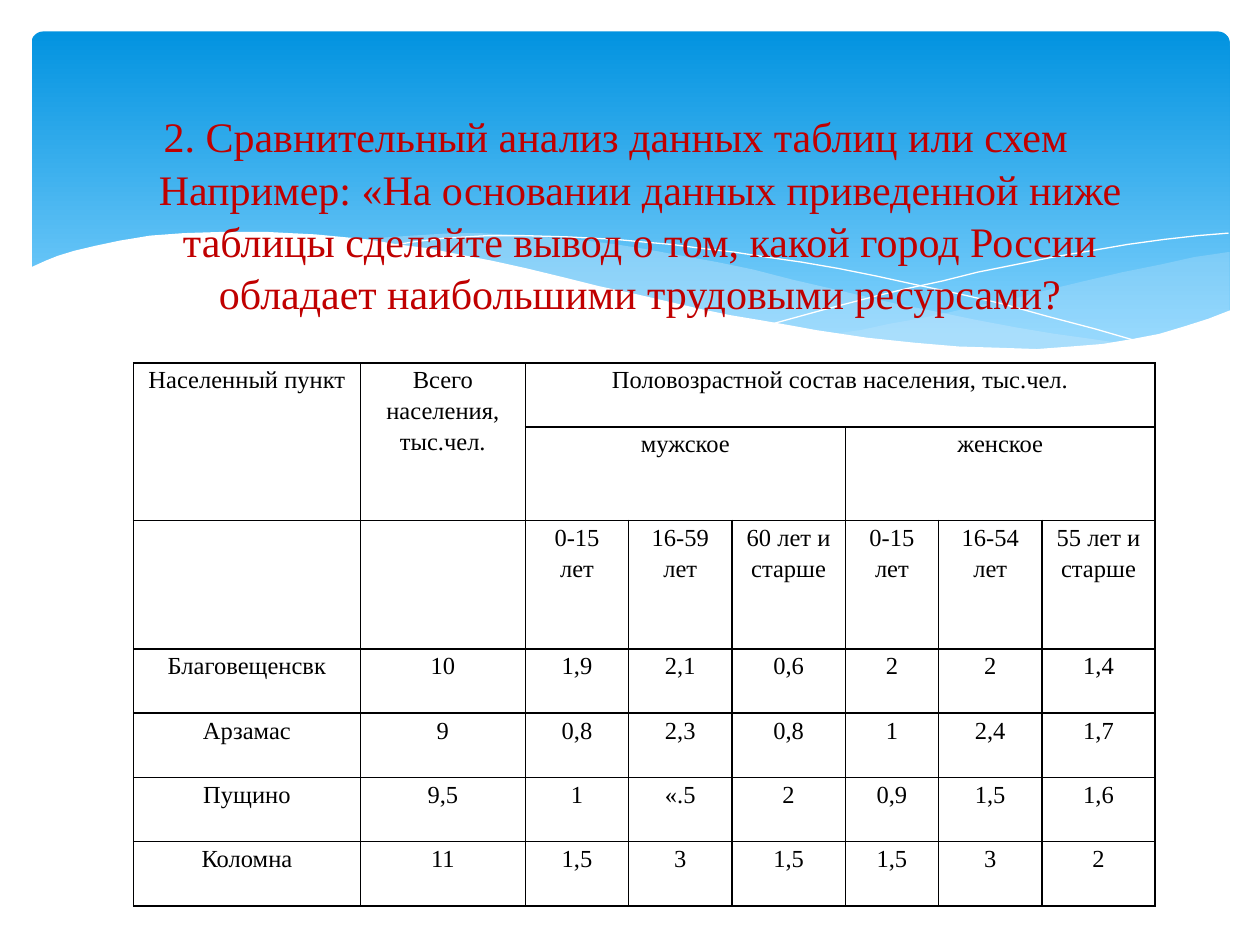
import pptx
import pptx.dml.color
import pptx.enum.shapes
import pptx.enum.text
import pptx.oxml
import pptx.oxml.ns
import pptx.util

COLUMNS, ROWS = 100, 75
FONT = "Times New Roman"
WHITE, PALE, RED, BLACK = "FFFFFF", "C6E7FC", "C00000", "000001"

RIGHT_RIBBON = [
    (97.5, 20), (96.2, 20.2), (94.8, 20.4), (92.1, 21), (89.1, 21.6), (86.1, 22.3),
    (83.2, 23), (80.5, 23.7), (77.9, 24.2), (75.3, 24.8), (72.9, 25.3), (70.6, 25.7),
    (68.3, 26.2), (66.1, 26.5), (69.1, 26.9), (71.9, 27.2), (74.5, 27.5), (76.9, 27.7),
    (80.3, 27.8), (83.5, 27.7), (86.3, 27.5), (88.9, 27.2), (91.3, 26.7), (93.5, 26.2),
    (94.9, 25.7), (96.3, 25.2), (97.6, 24.7), (97.6, 20),
]
LEFT_RIBBON = [
    (89.3, 27.3), (86.6, 26.9), (83.7, 26.5), (80.7, 26), (77.5, 25.4), (74.1, 24.7),
    (70.6, 24), (66.8, 23.1), (62.9, 22.2), (59.8, 21.4), (56.9, 20.8), (54.1, 20.3),
    (51.4, 19.8), (48.9, 19.4), (46.5, 19.1), (44.2, 18.9), (42, 18.7), (39.9, 18.6),
    (38, 18.5), (36.1, 18.5), (34.4, 18.6), (32.8, 18.7), (29.9, 18.9), (28.6, 19.1),
    (32.3, 19.6), (36.2, 20.3), (40.4, 21.1), (44.9, 22.2), (49.1, 23.2), (53, 24),
    (56.6, 24.8), (60.1, 25.5), (63.4, 26.1), (66.5, 26.6), (69.5, 27), (72.2, 27.4),
    (74.8, 27.6), (77.3, 27.7), (79.6, 27.8), (82.8, 27.8), (85.7, 27.7), (87.6, 27.5),
]
FALLING_CURVE = [
    (30.9, 19.5), (32.8, 19.2), (35.3, 18.9), (38.7, 18.7), (41.6, 18.7), (45, 18.8),
    (48.9, 19), (51, 19.2), (53.3, 19.4), (55.6, 19.7), (58.2, 20), (60.8, 20.4),
    (63.6, 20.8), (66.5, 21.3), (69.5, 21.9), (72.7, 22.6), (76, 23.3), (79.5, 24.1),
    (83.1, 25.1), (86.9, 26.1), (90.7, 27.2),
]
RISING_CURVE = [
    (61.3, 25.7), (65.3, 24.6), (69.5, 23.5), (72, 22.9), (74.8, 22.3), (77.6, 21.6),
    (80.6, 21), (83.6, 20.4), (86.6, 19.9), (89.5, 19.4), (92.4, 19), (95.1, 18.7),
    (97.5, 18.5),
]
WAVE = [
    (97.7, 24.6), (95.9, 25.3), (94, 25.9), (92, 26.5), (89.9, 26.9), (87.5, 27.3),
    (85, 27.5), (82.3, 27.7), (79.3, 27.6), (76.1, 27.5), (72.6, 27.2), (68.8, 26.8),
    (66.8, 26.5), (64.8, 26.2), (62.6, 25.8), (60.3, 25.4), (57.9, 25), (55.5, 24.5),
    (52.9, 23.9), (50.3, 23.3), (47.5, 22.7), (44.7, 22), (41.8, 21.3), (39.1, 20.7),
    (36.5, 20.2), (34, 19.7), (31.6, 19.4), (29.2, 19), (27.1, 18.8), (25, 18.6),
    (23, 18.5), (21.1, 18.4), (17.7, 18.4), (14.6, 18.5), (11.9, 18.7), (9.5, 19.1),
    (7.6, 19.5), (5.9, 19.9), (4.6, 20.3), (3.6, 20.7), (2.5, 21.2), (2.3, 21.3),
    (2.3, 32.9), (97.7, 32.9),
]

TITLE = (
    "2. Сравнительный анализ данных таблиц или схем \v"
    "Например: «На основании данных приведенной ниже таблицы сделайте вывод о том, "
    "какой город России обладает наибольшими трудовыми ресурсами?"
)
CELLS = [
    ["Населенный пункт", "Всего населения, тыс.чел.",
     "Половозрастной состав населения, тыс.чел.", "", "", "", "", ""],
    ["", "", "мужское", "", "", "женское", "", ""],
    ["", "", "0-15 лет", "16-59 лет", "60 лет и старше",
     "0-15 лет", "16-54 лет", "55 лет и старше"],
    ["Благовещенсвк", "10", "1,9", "2,1", "0,6", "2", "2", "1,4"],
    ["Арзамас", "9", "0,8", "2,3", "0,8", "1", "2,4", "1,7"],
    ["Пущино", "9,5", "1", "«.5", "2", "0,9", "1,5", "1,6"],
    ["Коломна", "11", "1,5", "3", "1,5", "1,5", "3", "2"],
]
MERGES = [((0, 0), (1, 0)), ((0, 1), (1, 1)), ((0, 2), (0, 7)),
          ((1, 2), (1, 4)), ((1, 5), (1, 7))]
COLUMN_WIDTHS = [18, 13.1, 8.2, 8.2, 9, 7.4, 8.2, 9]
ROW_HEIGHTS = [5.1, 7.4, 10.2] + [5.1] * 4


def color(value):
    return pptx.dml.color.RGBColor.from_string(value)


class Painter:
    def __init__(self, deck):
        self.deck = deck
        self.page = deck.slides.add_slide(deck.slide_layouts[6])

    def x(self, columns):
        return round(self.deck.slide_width * columns / COLUMNS)

    def y(self, rows):
        return round(self.deck.slide_height * rows / ROWS)

    def place(self, left, top, width, height):
        return self.x(left), self.y(top), self.x(width), self.y(height)

    def panel(self, area, start, end):
        shape = self.page.shapes.add_shape(
            pptx.enum.shapes.MSO_SHAPE.ROUNDED_RECTANGLE, *self.place(*area))
        shape.adjustments[0] = 0.034
        shape.shadow.inherit = False
        shape.line.fill.background()
        shape.fill.gradient()
        shape.fill.gradient_angle = 270
        for stop, position, value in zip(shape.fill.gradient_stops, (0, 0.9), (start, end)):
            stop.position = position
            stop.color.rgb = color(value)

    def outline(self, points, closed):
        spots = [(self.x(left), self.y(top)) for left, top in points]
        builder = self.page.shapes.build_freeform(*spots[0])
        builder.add_line_segments(spots[1:], close=closed)
        shape = builder.convert_to_shape()
        shape.shadow.inherit = False
        return shape

    def area(self, points, fill, opacity=100):
        shape = self.outline(points, True)
        shape.line.fill.background()
        shape.fill.solid()
        shape.fill.fore_color.rgb = color(fill)
        if opacity < 100:
            tint = shape.fill._xPr.find(".//" + pptx.oxml.ns.qn("a:srgbClr"))
            tint.append(pptx.oxml.parse_xml(
                f'<a:alpha {pptx.oxml.ns.nsdecls("a")} val="{opacity * 1000}"/>'))

    def curve(self, points):
        shape = self.outline(points, False)
        shape.fill.background()
        shape.line.color.rgb = color(WHITE)
        shape.line.width = pptx.util.Pt(0)

    def style(self, para, size, value):
        para.alignment = pptx.enum.text.PP_ALIGN.CENTER
        for span in para.runs:
            span.font.name = FONT
            span.font.size = pptx.util.Pt(size)
            span.font.color.rgb = color(value)

    def title(self, area, text):
        frame = self.page.shapes.add_textbox(*self.place(*area)).text_frame
        frame.word_wrap = True
        frame.vertical_anchor = pptx.enum.text.MSO_ANCHOR.MIDDLE
        frame.margin_bottom = self.y(4)
        frame.text = text
        para = frame.paragraphs[0]
        para.line_spacing = 1.04
        properties = para._p.get_or_add_pPr()
        properties.set("marL", str(self.x(3)))
        properties.set("indent", str(-self.x(3)))
        self.style(para, 24, RED)

    def cell(self, cell, text):
        cell.margin_left = cell.margin_right = self.x(0.8)
        cell.margin_top = cell.margin_bottom = 0
        properties = cell._tc.get_or_add_tcPr()
        for side in "LRTB":
            properties.append(pptx.oxml.parse_xml(
                f'<a:ln{side} {pptx.oxml.ns.nsdecls("a")} w="12700"><a:solidFill>'
                f'<a:srgbClr val="{BLACK}"/></a:solidFill></a:ln{side}>'))
        cell.fill.background()
        if text:
            cell.text_frame.text = text
            para = cell.text_frame.paragraphs[0]
            para.line_spacing = 1.15
            para.space_after = pptx.util.Pt(7.5)
            self.style(para, 14, "000000")

    def table(self, left, top, widths, heights, texts, merges):
        table = self.page.shapes.add_table(
            len(heights), len(widths),
            *self.place(left, top, sum(widths), sum(heights))).table
        table.first_row = table.horz_banding = False
        for column, width in zip(table.columns, widths):
            column.width = self.x(width)
        for row, height, line in zip(table.rows, heights, texts):
            row.height = self.y(height)
            for cell, text in zip(row.cells, line):
                self.cell(cell, text)
        for first, last in merges:
            table.cell(*first).merge(table.cell(*last))


def main():
    deck = pptx.Presentation()
    deck.slide_width = pptx.util.Inches(10)
    deck.slide_height = pptx.util.Inches(7.5)
    painter = Painter(deck)
    painter.panel((2.5, 2.5, 95.1, 27), "0293E0", "83D3FE")
    painter.area(RIGHT_RIBBON, PALE, 29)
    painter.area(LEFT_RIBBON, PALE, 40)
    painter.curve(FALLING_CURVE)
    painter.curve(RISING_CURVE)
    painter.area(WAVE, WHITE)
    painter.table(10.6, 28.8, COLUMN_WIDTHS, ROW_HEIGHTS, CELLS, MERGES)
    painter.title((4.3, 9.9, 90, 17.6), TITLE)
    deck.save("out.pptx")


if __name__ == "__main__":
    main()
